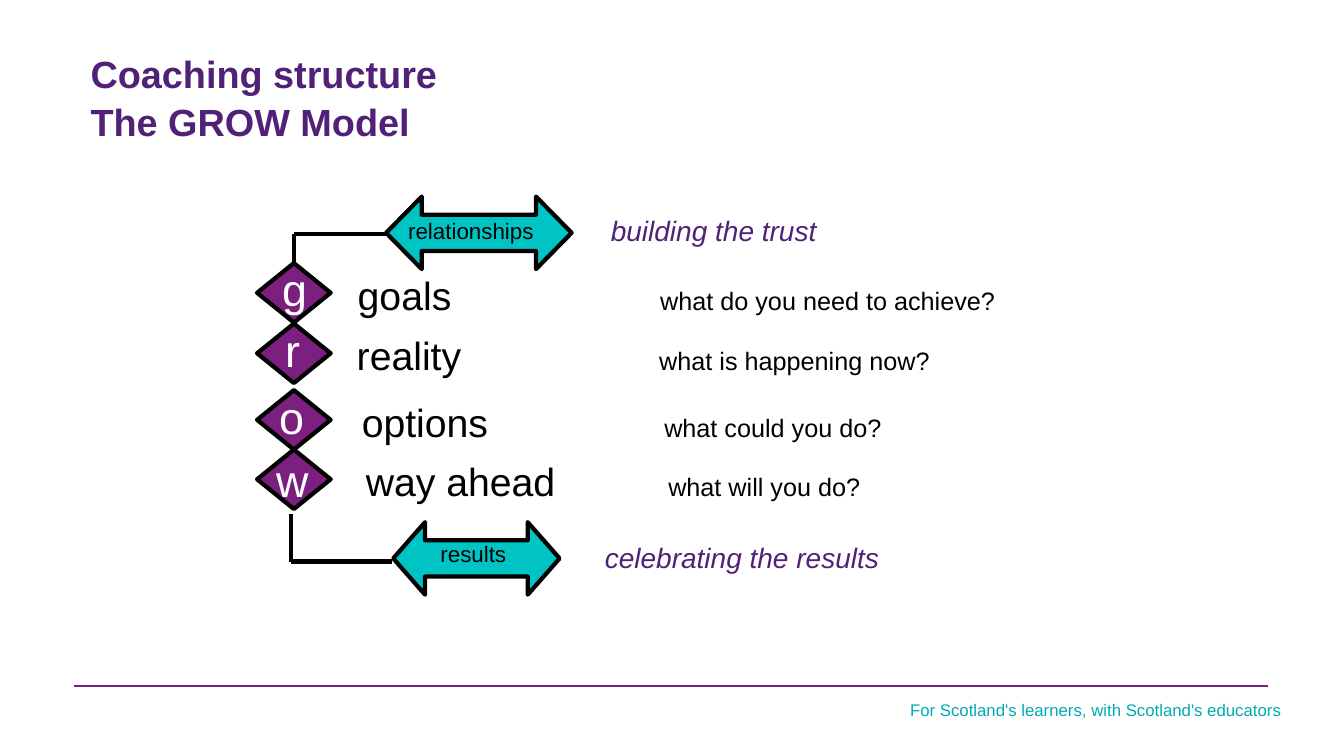
from pptx import Presentation
from pptx.dml.color import RGBColor
from pptx.enum.shapes import MSO_CONNECTOR, MSO_SHAPE
from pptx.enum.text import MSO_ANCHOR, PP_ALIGN
from pptx.oxml.ns import qn
from pptx.util import Inches, Pt
from lxml import etree

PURPLE = RGBColor(0x7B, 0x20, 0x7F)
VIOLET = RGBColor(0x51, 0x21, 0x78)
TEAL = RGBColor(0x00, 0xAB, 0xB5)
AQUA = RGBColor(0x00, 0xC4, 0xC4)
BLACK = RGBColor(0, 0, 0)
WHITE = RGBColor(255, 255, 255)

deck = Presentation()
deck.slide_width = Inches(13.33)
deck.slide_height = Inches(7.5)
slide = deck.slides.add_slide(deck.slide_layouts[6])
shapes = slide.shapes


def add_text(text, left, top, width, height, size, color, tab=None):
    box = shapes.add_textbox(Inches(left), Inches(top), Inches(width), Inches(height))
    box.text_frame.word_wrap = True
    para = box.text_frame.paragraphs[0]
    para.text = text
    if tab:
        stops = etree.SubElement(para._p.get_or_add_pPr(), qn("a:tabLst"))
        etree.SubElement(stops, qn("a:tab"), pos=str(Inches(tab)), algn="l")
    para.font.name = "Arial"
    para.font.size = Pt(size)
    para.font.color.rgb = color
    return box.text_frame, para


def add_form(kind, left, top, width, height, fill):
    form = shapes.add_shape(kind, Inches(left), Inches(top), Inches(width), Inches(height))
    form.shadow.inherit = False
    form.fill.solid()
    form.fill.fore_color.rgb = fill
    form.line.color.rgb = BLACK
    form.line.width = Pt(3)
    return form


frame, para = add_text("Coaching structure\vThe GROW Model", 0.8, 0.56, 9.8, 0.79, 27, VIOLET)
frame.vertical_anchor = MSO_ANCHOR.MIDDLE
para.font.bold = True
para.line_spacing = 1.06

frame, para = add_text("For Scotland's learners, with Scotland's educators",
                       8.14, 6.89, 4.67, 0.3, 12, TEAL)
para.alignment = PP_ALIGN.RIGHT

steps = [
    ("g", 2.7, 2.55, 2.61, "goals", 3.45, "what do you need to achieve?"),
    ("r", 2.73, 3.15, 3.21, "reality", 3.44, "what is happening now?"),
    ("o", 2.67, 3.82, 3.87, "options", 3.49, "what could you do?"),
    ("w", 2.64, 4.44, 4.46, "way ahead", 3.53, "what will you do?"),
]
for letter, left, top, mark, word, start, query in steps:
    add_form(MSO_SHAPE.FLOWCHART_DECISION, 2.55, mark, 0.73, 0.59, PURPLE)
    add_text(letter, left, top, 0.55, 0.63, 32, WHITE)
    frame, para = add_text(word + "\t", start, mark + 0.03, 7.2, 0.57, 28, BLACK, tab=3)
    run = para.add_run()
    run.text = query
    run.font.size = Pt(18)

ends = [
    ("relationships", 3.95, 2.11, 3.83, 1.95, 1.84, 0.491, "building the trust", 5.96, 2.07),
    ("results", 4.27, 5.31, 3.9, 5.18, 1.65, 0.439, "celebrating the results", 5.9, 5.31),
]
for name, left, top, edge, peak, width, head, note, start, line in ends:
    arrow = add_form(MSO_SHAPE.LEFT_RIGHT_ARROW, edge, peak, width, 0.72, AQUA)
    arrow.adjustments[0] = 0.5
    arrow.adjustments[1] = head
    add_text(name, left, top, 1.6, 0.37, 16, BLACK)
    frame, para = add_text(note, start, line, 4, 0.44, 20, VIOLET)
    para.font.italic = True

links = [
    (0.73, 6.81, 12.58, 6.81, PURPLE, 1.5),
    (3.83, 2.32, 2.92, 2.32, BLACK, 3),
    (2.92, 2.32, 2.92, 2.64, BLACK, 3),
    (3.89, 5.57, 2.89, 5.57, BLACK, 3),
    (2.89, 5.58, 2.89, 5.1, BLACK, 3),
]
for left, top, right, base, color, weight in links:
    link = shapes.add_connector(MSO_CONNECTOR.STRAIGHT, Inches(left), Inches(top),
                                Inches(right), Inches(base))
    link.line.color.rgb = color
    link.line.width = Pt(weight)
    etree.SubElement(link._element.spPr, qn("a:effectLst"))

deck.save("out.pptx")
